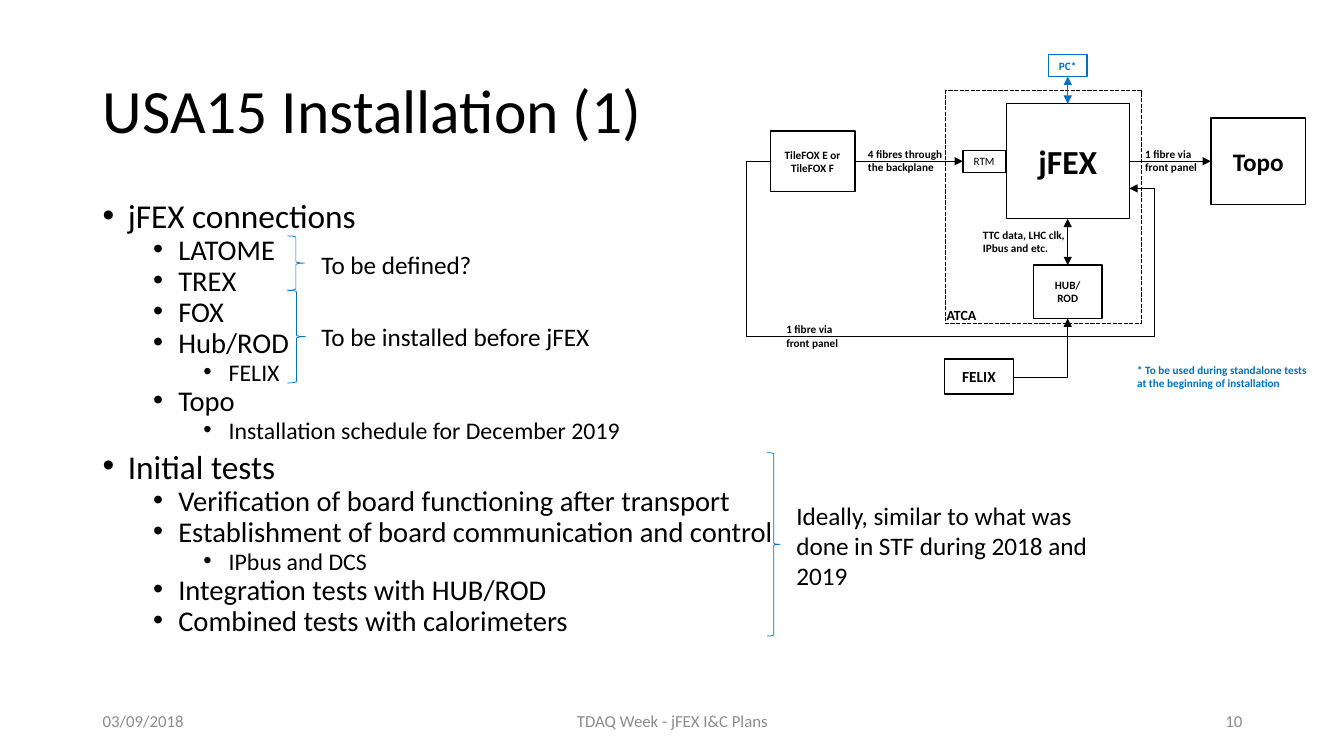
from lxml import etree
from pptx import Presentation
from pptx import util as u
from pptx.dml.color import RGBColor
from pptx.enum import dml, shapes, text
from pptx.oxml.ns import qn

PX = 9144  # 100 px to the inch
FONT = "Calibri"
BLACK, BLUE, GREY, WHITE = "000000", "0070C0", "8C8C8C", "FFFFFF"
LEFT, MID, RIGHT = text.PP_ALIGN.LEFT, text.PP_ALIGN.CENTER, text.PP_ALIGN.RIGHT
TOP, LOW, WEST, EAST = 0, 2, 1, 3  # connection sites

TITLE = ("USA15 Installation (1)", (92, 40, 1150, 145))
BODY = (92, 200, 1150, 476)
SIZES = (23.8, 20.4, 17)
BULLETS = [
    (0, "jFEX connections"),
    (1, "LATOME"),
    (1, "TREX"),
    (1, "FOX"),
    (1, "Hub/ROD"),
    (2, "FELIX"),
    (1, "Topo"),
    (2, "Installation schedule for December 2019"),
    (0, "Initial tests"),
    (1, "Verification of board functioning after transport"),
    (1, "Establishment of board communication and control"),
    (2, "IPbus and DCS"),
    (1, "Integration tests with HUB/ROD"),
    (1, "Combined tests with calorimeters"),
]
FOOTER = [
    ("03/09/2018", 92, 300, LEFT),
    ("TDAQ Week - jFEX I&C Plans", 442, 450, MID),
    ("10", 942, 300, RIGHT),
]
# brace area, note, note area
BRACES = [
    ((761, 449, 13, 182), "Ideally, similar to what was done in STF during 2018 and 2019",
     (780, 491, 317, 101)),
    ((285, 288, 18, 92), "To be installed before jFEX", (309, 314, 317, 40)),
    ((285, 234, 17, 54), "To be defined?", (309, 242, 189, 40)),
]
CRATE = (938, 90, 194, 231)
# name: lines, area, size, bold, colour
BOXES = {
    "rtm": (["RTM"], (955, 149, 42, 22), 8, False, BLACK),
    "hub": (["HUB/", "ROD"], (1025, 263, 68, 53), 8, True, BLACK),
    "pc": (["PC*"], (1040, 54, 38, 22), 8, True, BLUE),
    "topo": (["Topo"], (1201, 117, 94, 86), 18, True, BLACK),
    "tile": (["TileFOX E or TileFOX F"], (764, 130, 84, 60), 8, True, BLACK),
    "jfex": (["jFEX"], (998, 103, 122, 114), 24, True, BLACK),
    "felix": (["FELIX"], (937, 356, 68, 35), 11, True, BLACK),
}
# from, site, to, site, both heads, colour
LINKS = [
    ("tile", EAST, "rtm", WEST, False, BLACK),
    ("jfex", LOW, "hub", TOP, True, BLACK),
    ("pc", LOW, "jfex", TOP, True, BLUE),
    ("jfex", EAST, "topo", WEST, False, BLACK),
]
# ends, preset, adjustments
BENDS = [
    ((765, 160, 1120, 187), "bentConnector5", (-7000, 644500, 107000)),
    ((1005, 374, 1059, 316), "bentConnector2", ()),
]
LABELS = [
    ("1 fibre via front panel", (770, 317, 81, 33), 8, BLACK),
    ("4 fibres through the backplane", (851, 143, 99, 33), 8, BLACK),
    ("TTC data, LHC clk, IPbus and etc.", (965, 223, 108, 33), 8, BLACK),
    ("ATCA", (929, 301, 52, 22), 10, BLACK),
    ("1 fibre via front panel", (1126, 143, 81, 33), 8, BLACK),
    ("* To be used during standalone tests at the beginning of installation",
     (1118, 356, 197, 35), 8, BLUE),
]

deck = Presentation()
deck.slide_width, deck.slide_height = 1333 * PX, 750 * PX
slide = deck.slides.add_slide(deck.slide_layouts[6])
parts = slide.shapes


def emu(area):
    return [v * PX for v in area]


def rgb(code):
    return RGBColor.from_string(code)


def write(para, words, size, color=BLACK, bold=False, align=LEFT):
    para.alignment = align
    run = para.add_run()
    run.text = words
    font = run.font
    font.name, font.size, font.bold = FONT, u.Pt(size), bold
    font.color.rgb = rgb(color)


def label(words, area, size, color=BLACK, bold=False, align=LEFT, mid=True):
    frame = parts.add_textbox(*emu(area)).text_frame
    frame.word_wrap = True
    frame.vertical_anchor = text.MSO_ANCHOR.MIDDLE if mid else text.MSO_ANCHOR.TOP
    write(frame.paragraphs[0], words, size, color, bold, align)
    return frame


def shape(kind, area, color, width, fill=None):
    item = parts.add_shape(kind, *emu(area))
    item.shadow.inherit = False
    item.line.color.rgb, item.line.width = rgb(color), u.Pt(width)
    if fill:
        item.fill.solid()
        item.fill.fore_color.rgb = rgb(fill)
    else:
        item.fill.background()
    return item


def link(kind, ends, color, heads):
    wire = parts.add_connector(kind, *emu(ends))
    wire.line.color.rgb, wire.line.width = rgb(color), u.Pt(0.5)
    for head in heads:
        etree.SubElement(wire.line._get_or_add_ln(), qn("a:" + head), type="triangle")
    etree.SubElement(wire._element.spPr, qn("a:effectLst"))
    return wire


# Title and bullet list
label(*TITLE, 44).paragraphs[0].line_spacing = 0.9

body = parts.add_textbox(*emu(BODY)).text_frame
body.word_wrap = True
for i, (level, words) in enumerate(BULLETS):
    para = body.add_paragraph() if i else body.paragraphs[0]
    write(para, words, SIZES[level])
    para.level = level
    para.line_spacing = 0.7
    para.space_before = u.Pt(5 if level else 10)
    props = para._p.get_or_add_pPr()
    props.set("marL", str((25 + 50 * level) * PX))
    props.set("indent", str(-25 * PX))
    etree.SubElement(props, qn("a:buFont"), typeface="Arial")
    etree.SubElement(props, qn("a:buChar"), char="•")

# Footer
for words, left, width, align in FOOTER:
    label(words, (left, 695, width, 40), 12, GREY, align=align)

# Braces with notes
for area, words, place in BRACES:
    shape(shapes.MSO_SHAPE.RIGHT_BRACE, area, BLUE, 0.5)
    label(words, place, 18, mid=False)

# Crate and boxes
crate = shape(shapes.MSO_SHAPE.RECTANGLE, CRATE, BLACK, 1)
crate.line.dash_style = dml.MSO_LINE.SQUARE_DOT
boxes = {}
for name, (lines, area, size, bold, color) in BOXES.items():
    box = boxes[name] = shape(shapes.MSO_SHAPE.RECTANGLE, area, color, 1, WHITE)
    frame = box.text_frame
    frame.word_wrap = " " in lines[0]
    frame.vertical_anchor = text.MSO_ANCHOR.MIDDLE
    for i, words in enumerate(lines):
        para = frame.add_paragraph() if i else frame.paragraphs[0]
        write(para, words, size, color, bold, MID)

# Straight and bent arrows
for start, out, end, into, both, color in LINKS:
    heads = ("headEnd", "tailEnd") if both else ("tailEnd",)
    wire = link(shapes.MSO_CONNECTOR.STRAIGHT, (0, 0, 0, 0), color, heads)
    wire.begin_connect(boxes[start], out)
    wire.end_connect(boxes[end], into)

for ends, preset, turns in BENDS:
    wire = link(shapes.MSO_CONNECTOR.ELBOW, ends, BLACK, ("tailEnd",))
    geom = wire._element.spPr.find(qn("a:prstGeom"))
    geom.set("prst", preset)
    guides = geom.find(qn("a:avLst"))
    for i, turn in enumerate(turns, 1):
        etree.SubElement(guides, qn("a:gd"), name=f"adj{i}", fmla=f"val {turn}")

# Diagram labels
for words, area, size, color in LABELS:
    label(words, area, size, color, bold=True)

deck.save("out.pptx")
